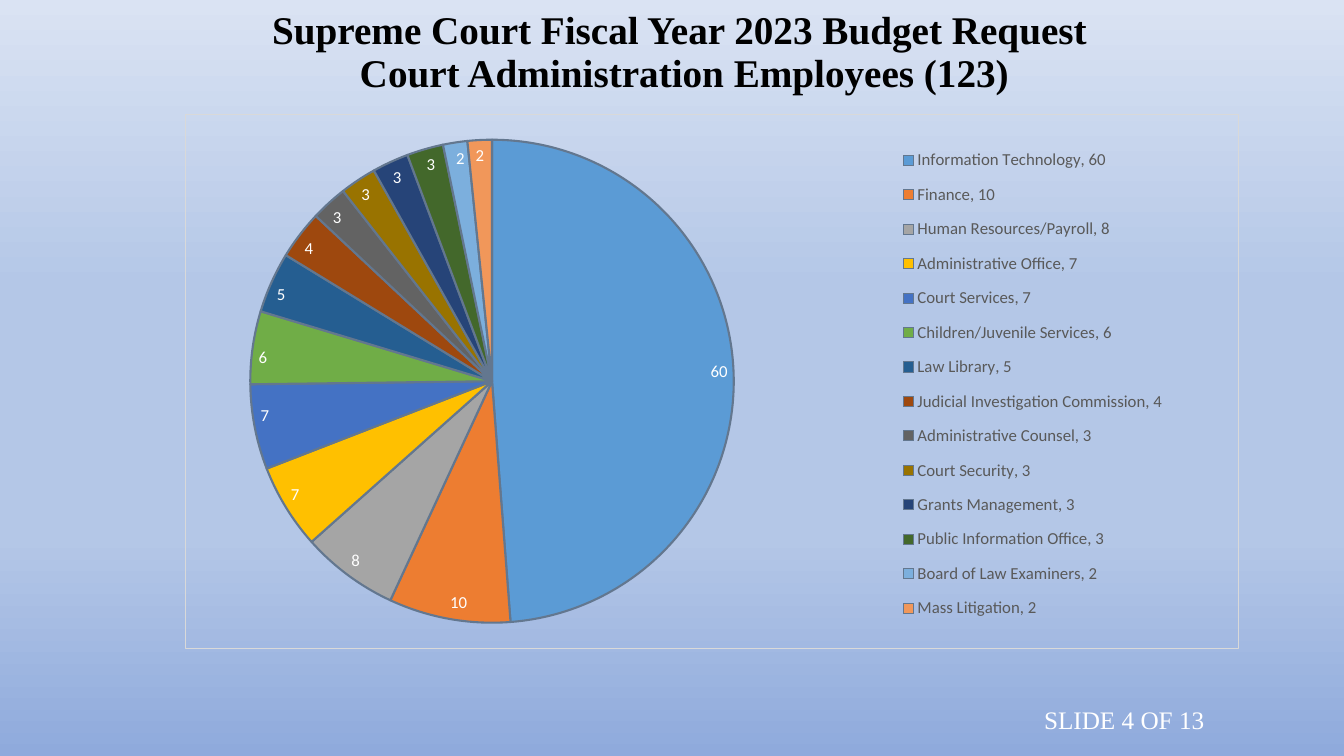
from lxml import etree
from pptx import Presentation
from pptx import util as u
from pptx.chart.data import CategoryChartData
from pptx.dml.color import RGBColor
from pptx.enum import chart as charts, text
from pptx.oxml import parse_xml
from pptx.oxml.ns import nsdecls, qn

BLACK = RGBColor(0x00, 0x00, 0x00)
WHITE = RGBColor(0xFF, 0xFF, 0xFF)
GREY_TEXT = RGBColor(0x59, 0x59, 0x59)
FRAME = RGBColor(0xD9, 0xD9, 0xD9)
SLICE_EDGE = RGBColor(0x63, 0x77, 0x8F)
BLUE_DEEP = RGBColor(0x8F, 0xAA, 0xDC)
BLUE_MID = RGBColor(0xB4, 0xC7, 0xE7)
BLUE_PALE = RGBColor(0xDA, 0xE3, 0xF3)
BACKGROUND = [(0, BLUE_DEEP), (29, BLUE_MID), (62, BLUE_MID), (100, BLUE_PALE)]

EMPLOYEES = [
    ("Information Technology", 60, RGBColor(0x5B, 0x9B, 0xD5)),
    ("Finance", 10, RGBColor(0xED, 0x7D, 0x31)),
    ("Human Resources/Payroll", 8, RGBColor(0xA5, 0xA5, 0xA5)),
    ("Administrative Office", 7, RGBColor(0xFF, 0xC0, 0x00)),
    ("Court Services", 7, RGBColor(0x44, 0x72, 0xC4)),
    ("Children/Juvenile Services", 6, RGBColor(0x70, 0xAD, 0x47)),
    ("Law Library", 5, RGBColor(0x25, 0x5E, 0x91)),
    ("Judicial Investigation Commission", 4, RGBColor(0x9E, 0x48, 0x0E)),
    ("Administrative Counsel", 3, RGBColor(0x63, 0x63, 0x63)),
    ("Court Security", 3, RGBColor(0x99, 0x73, 0x00)),
    ("Grants Management", 3, RGBColor(0x26, 0x44, 0x78)),
    ("Public Information Office", 3, RGBColor(0x43, 0x68, 0x2B)),
    ("Board of Law Examiners", 2, RGBColor(0x7C, 0xAF, 0xDD)),
    ("Mass Litigation", 2, RGBColor(0xF1, 0x97, 0x5A)),
]


def set_font(font, name, size, color, bold=False):
    font.name = name
    font.size = u.Pt(size)
    font.color.rgb = color
    font.bold = bold


def write_text(frame, wording, align, name, size, color, bold=False, spacing=None):
    para = frame.paragraphs[0]
    para.text = wording
    para.alignment = align
    para.line_spacing = spacing
    for span in para.runs:
        set_font(span.font, name, size, color, bold)


def set_layout(parent, index, left, top, width, height, inner=False):
    for old in parent.findall(qn("c:layout")):
        parent.remove(old)
    layout = etree.Element(qn("c:layout"))
    manual = etree.SubElement(layout, qn("c:manualLayout"))
    settings = [("layoutTarget", "inner")] if inner else []
    settings += [("xMode", "edge"), ("yMode", "edge"),
                 ("x", left), ("y", top), ("w", width), ("h", height)]
    for tag, value in settings:
        etree.SubElement(manual, qn(f"c:{tag}")).set("val", str(value))
    parent.insert(index, layout)


class BudgetSlide:
    title_font = "Times New Roman"
    chart_font = "Calibri"

    def __init__(self, deck):
        self.page = deck.slides.add_slide(deck.slide_layouts[6])

    def background(self, stops):
        fill = self.page.background.fill
        fill.gradient()
        fill.gradient_angle = 90
        stop_list = next(self.page.element.iter(qn("a:gsLst")))
        for old in list(stop_list):
            stop_list.remove(old)
        for percent, color in stops:
            stop = etree.SubElement(stop_list, qn("a:gs"), pos=str(percent * 1000))
            etree.SubElement(stop, qn("a:srgbClr"), val=str(color))

    def text_box(self, wording, left, top, width, height, align, size, color,
                 anchor=text.MSO_ANCHOR.TOP, autosize=text.MSO_AUTO_SIZE.NONE, **style):
        box = self.page.shapes.add_textbox(u.Cm(left), u.Cm(top), u.Cm(width), u.Cm(height))
        frame = box.text_frame
        frame.word_wrap = True
        frame.vertical_anchor = anchor
        frame.auto_size = autosize
        write_text(frame, wording, align, self.title_font, size, color, **style)

    def pie(self, rows, left, top, width, height):
        data = CategoryChartData(number_format="General")
        data.categories = [f"{office}, {count}" for office, count, _ in rows]
        data.add_series("Series 1", [count for _, count, _ in rows])
        chart = self.page.shapes.add_chart(
            charts.XL_CHART_TYPE.PIE, u.Cm(left), u.Cm(top), u.Cm(width), u.Cm(height), data
        ).chart
        set_font(chart.font, self.chart_font, 10, BLACK)
        chart.has_title = False
        plot = chart.plots[0]
        plot.vary_by_categories = True
        self.slices(plot, [color for _, _, color in rows])
        self.legend(chart)
        plot_area = next(chart.element.iter(qn("c:plotArea")))
        set_layout(plot_area, 0, 0.062, 0.019, 0.459, 0.961, inner=True)
        border = parse_xml(
            f'<c:spPr {nsdecls("c", "a")}><a:noFill/><a:ln w="{u.Pt(0.75)}">'
            f'<a:solidFill><a:srgbClr val="{FRAME}"/></a:solidFill></a:ln></c:spPr>'
        )
        chart.element.find(qn("c:chart")).addnext(border)

    def slices(self, plot, colors):
        for index, color in enumerate(colors):
            form = plot.series[0].points[index].format
            form.fill.solid()
            form.fill.fore_color.rgb = color
            form.line.color.rgb = SLICE_EDGE
            form.line.width = u.Pt(1.5)
        plot.has_data_labels = True
        labels = plot.data_labels
        labels.show_value = True
        labels.show_percentage = False
        labels.position = charts.XL_LABEL_POSITION.INSIDE_END
        set_font(labels.font, self.chart_font, 12, WHITE)

    def legend(self, chart):
        chart.has_legend = True
        legend = chart.legend
        legend.position = charts.XL_LEGEND_POSITION.BOTTOM
        legend.include_in_layout = False
        set_font(legend.font, self.chart_font, 12, GREY_TEXT)
        set_layout(next(chart.element.iter(qn("c:legend"))), 1, 0.67, 0.04, 0.27, 0.93)


def main():
    deck = Presentation()
    deck.slide_width, deck.slide_height = u.Cm(33.87), u.Cm(19.05)
    slide = BudgetSlide(deck)
    slide.background(BACKGROUND)
    slide.text_box(
        "Supreme Court Fiscal Year 2023 Budget Request \vCourt Administration Employees (123)",
        2.54, 0.81, 29.41, 1.07, text.PP_ALIGN.CENTER, 28, BLACK,
        anchor=text.MSO_ANCHOR.MIDDLE, bold=True, spacing=0.9)
    slide.text_box(
        "SLIDE 4 OF 13", 25.7, 17.63, 4.9, 1.02, text.PP_ALIGN.RIGHT, 18, WHITE,
        autosize=text.MSO_AUTO_SIZE.SHAPE_TO_FIT_TEXT)
    slide.pie(EMPLOYEES, 4.65, 2.87, 26.57, 13.49)
    deck.save("out.pptx")


if __name__ == "__main__":
    main()
